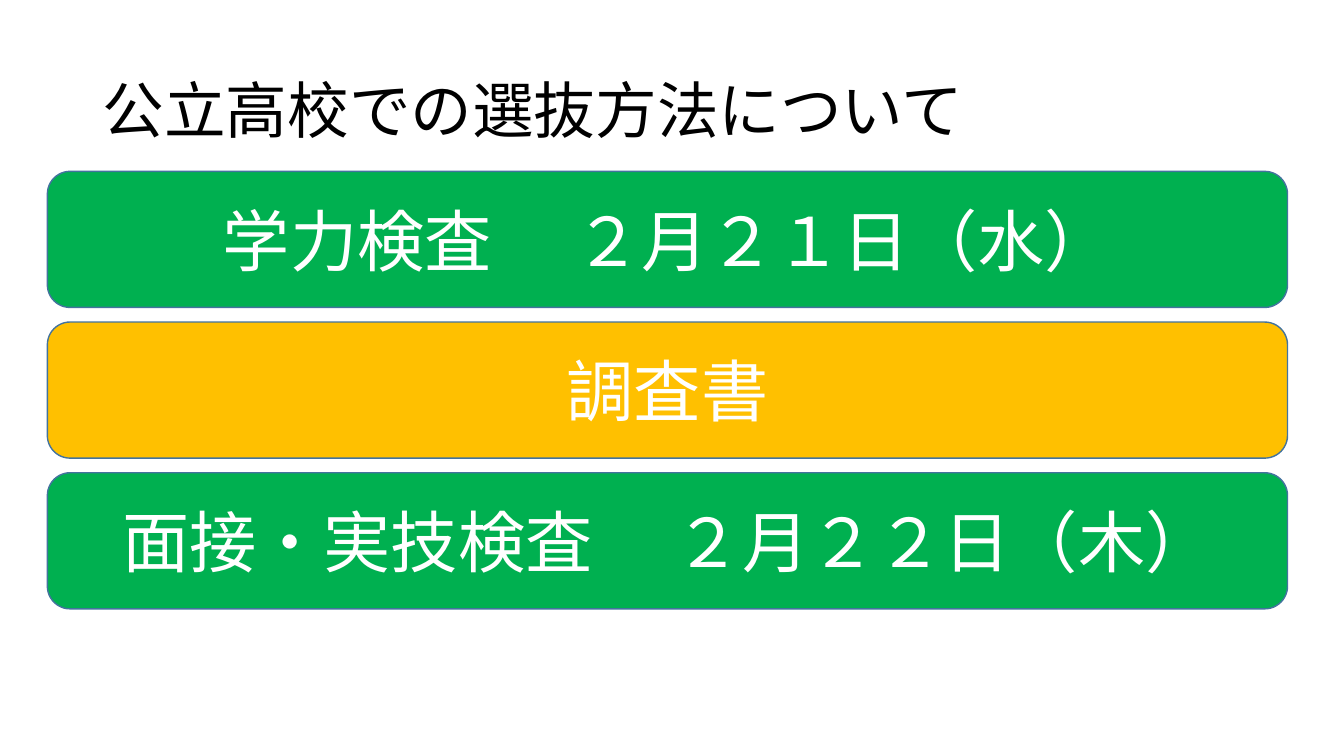
from pptx import Presentation
from pptx.dml.color import RGBColor
from pptx.enum.shapes import MSO_SHAPE
from pptx.enum.text import MSO_ANCHOR, PP_ALIGN
from pptx.util import Inches, Pt

BLACK = RGBColor(0x00, 0x00, 0x00)
WHITE = RGBColor(0xFF, 0xFF, 0xFF)
GREEN = RGBColor(0x00, 0xB0, 0x50)
AMBER = RGBColor(0xFF, 0xC0, 0x00)
OUTLINE = RGBColor(0x43, 0x73, 0x9E)


def write_text(shape, text, size, color, alignment):
    frame = shape.text_frame
    frame.word_wrap = True
    frame.vertical_anchor = MSO_ANCHOR.MIDDLE
    paragraph = frame.paragraphs[0]
    paragraph.text = text
    paragraph.alignment = alignment
    paragraph.font.name = "Calibri"
    paragraph.font.size = Pt(size)
    paragraph.font.color.rgb = color
    return paragraph


presentation = Presentation()
presentation.slide_width = Inches(13.33)
presentation.slide_height = Inches(7.5)
slide = presentation.slides.add_slide(presentation.slide_layouts[6])

# Title
title = slide.shapes.add_textbox(Inches(0.92), Inches(0.4), Inches(11.5), Inches(1.45))
title_paragraph = write_text(title, "公立高校での選抜方法について", 44, BLACK, PP_ALIGN.LEFT)
title_paragraph.line_spacing = 0.9

# Selection methods, one bar each
methods = [
    ("学力検査　 ２月２１日（水）", GREEN),
    ("調査書", AMBER),
    ("面接・実技検査　 ２月２２日（木）", GREEN),
]
FIRST_TOP, PITCH = 1.7, 1.495
for row, (text, color) in enumerate(methods):
    bar = slide.shapes.add_shape(
        MSO_SHAPE.ROUNDED_RECTANGLE,
        Inches(0.47), Inches(FIRST_TOP + row * PITCH), Inches(12.3), Inches(1.35))
    bar.shadow.inherit = False
    bar.fill.solid()
    bar.fill.fore_color.rgb = color
    bar.line.color.rgb = OUTLINE
    bar.line.width = Pt(1)
    write_text(bar, text, 48, WHITE, PP_ALIGN.CENTER)

presentation.save("out.pptx")
